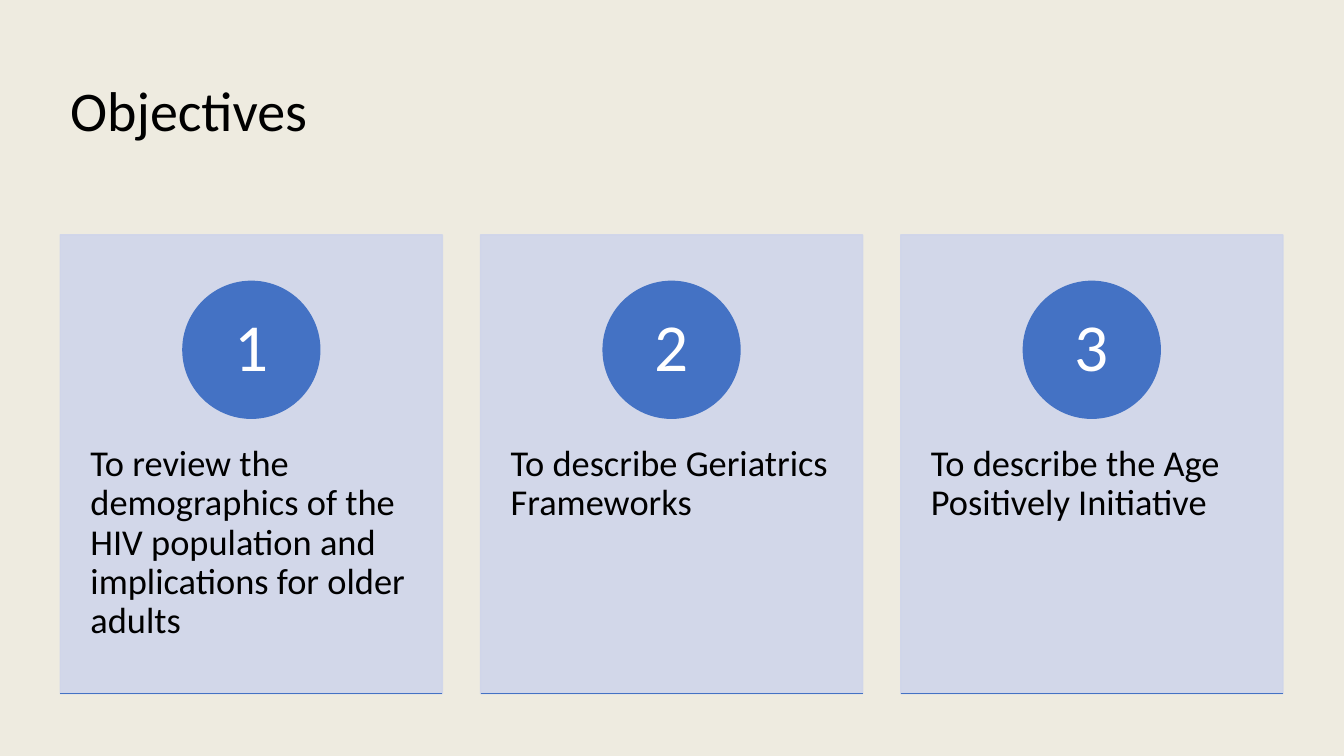
"""Build the Objectives slide with three numbered cards."""
from dataclasses import dataclass

from lxml.etree import SubElement
from pptx import Presentation
from pptx.dml.color import RGBColor
from pptx.dml.fill import FillFormat
from pptx.enum.shapes import MSO_CONNECTOR, MSO_SHAPE
from pptx.enum.text import MSO_ANCHOR, PP_ALIGN
from pptx.oxml.ns import qn
from pptx.shapes.autoshape import Shape
from pptx.slide import Slide
from pptx.util import Cm, Pt

COLOURS = {
    "base": "F2F2F2",
    "tint": "BF9000",
    "card": "CFD5EA",
    "accent": "4472C4",
    "dark": "000000",
    "light": "FFFFFF",
}
SLIDE_WIDTH, SLIDE_HEIGHT = 33.87, 19.05
MARGIN = 1.52
CARD_TOP, CARD_WIDTH, CARD_HEIGHT, CARD_PITCH = 5.92, 9.63, 11.56, 10.59
TEXT_TOP, TEXT_HEIGHT = 10.31, 6.93
CIRCLE_TOP, CIRCLE_SIZE, NUMBER_SIZE = 7.09, 3.45, 2.44


@dataclass(frozen=True)
class Box:
    """A rectangle in centimetres."""

    left: float
    top: float
    width: float
    height: float

    def lengths(self) -> tuple[Cm, Cm, Cm, Cm]:
        """Return the box as slide lengths."""
        return Cm(self.left), Cm(self.top), Cm(self.width), Cm(self.height)


@dataclass(frozen=True)
class Objective:
    """One numbered objective."""

    number: int
    text: str


OBJECTIVES = [
    Objective(1, "To review the demographics of the HIV population and implications for older adults"),
    Objective(2, "To describe Geriatrics Frameworks"),
    Objective(3, "To describe the Age Positively Initiative"),
]


def paint(fill: FillFormat, colour: str, opacity: int) -> None:
    """Apply a solid colour with an opacity in percent."""
    fill.solid()
    fill.fore_color.rgb = RGBColor.from_string(COLOURS[colour])
    if opacity < 100:
        for element in fill._xPr.iter(qn("a:srgbClr")):
            SubElement(element, qn("a:alpha"), val=str(opacity * 1000))


def add_block(slide: Slide, kind: MSO_SHAPE, box: Box, colour: str,
              opacity: int = 100, outlined: bool = True) -> None:
    """Add a plain filled shape."""
    shape = slide.shapes.add_shape(kind, *box.lengths())
    shape.shadow.inherit = False
    paint(shape.fill, colour, opacity)
    if outlined:
        shape.line.width = Pt(1)
        paint(shape.line.fill, colour, opacity)
    else:
        shape.line.fill.background()


def write(shape: Shape, text: str, *, size: int, colour: str = "dark",
          align: PP_ALIGN = PP_ALIGN.LEFT, anchor: MSO_ANCHOR = MSO_ANCHOR.TOP,
          insets: tuple[float, float] = (0.25, 0.13)) -> None:
    """Write one formatted paragraph into a shape."""
    frame = shape.text_frame
    frame.word_wrap = True
    frame.vertical_anchor = anchor
    frame.margin_left = frame.margin_right = Cm(insets[0])
    frame.margin_top = frame.margin_bottom = Cm(insets[1])
    paragraph = frame.paragraphs[0]
    paragraph.alignment = align
    paragraph.line_spacing = 0.9
    run = paragraph.add_run()
    run.text = text
    run.font.name = "Calibri"
    run.font.size = Pt(size)
    run.font.color.rgb = RGBColor.from_string(COLOURS[colour])


def add_baseline(slide: Slide, left: float) -> None:
    """Add the accent line under a card."""
    bottom = Cm(CARD_TOP + CARD_HEIGHT)
    line = slide.shapes.add_connector(
        MSO_CONNECTOR.STRAIGHT, Cm(left), bottom, Cm(left + CARD_WIDTH), bottom)
    line.line.width = Pt(1)
    paint(line.line.fill, "accent", 100)
    SubElement(line._element.spPr, qn("a:effectLst"))


def add_card(slide: Slide, objective: Objective, left: float) -> None:
    """Add one card with its text, number and baseline."""
    add_block(slide, MSO_SHAPE.RECTANGLE,
              Box(left, CARD_TOP, CARD_WIDTH, CARD_HEIGHT), "card", opacity=90)
    text_box = Box(left, TEXT_TOP, CARD_WIDTH, TEXT_HEIGHT)
    write(slide.shapes.add_textbox(*text_box.lengths()), objective.text,
          size=26, insets=(0.76, 0.91))

    circle_left = left + (CARD_WIDTH - CIRCLE_SIZE) / 2
    add_block(slide, MSO_SHAPE.OVAL,
              Box(circle_left, CIRCLE_TOP, CIRCLE_SIZE, CIRCLE_SIZE), "accent")
    gap = (CIRCLE_SIZE - NUMBER_SIZE) / 2
    number_box = Box(circle_left + gap, CIRCLE_TOP + gap, NUMBER_SIZE, NUMBER_SIZE)
    write(slide.shapes.add_textbox(*number_box.lengths()), str(objective.number),
          size=48, colour="light", align=PP_ALIGN.CENTER,
          anchor=MSO_ANCHOR.MIDDLE, insets=(0.28, 0.03))
    add_baseline(slide, left)


def main() -> None:
    """Build and save the presentation."""
    presentation = Presentation()
    presentation.slide_width = Cm(SLIDE_WIDTH)
    presentation.slide_height = Cm(SLIDE_HEIGHT)
    slide = presentation.slides.add_slide(presentation.slide_layouts[5])

    full_slide = Box(0, 0, SLIDE_WIDTH, SLIDE_HEIGHT)
    for colour, opacity in (("base", 100), ("tint", 7)):
        add_block(slide, MSO_SHAPE.RECTANGLE, full_slide, colour, opacity, outlined=False)

    title = slide.shapes.title
    title.left, title.top, title.width, title.height = Box(MARGIN, 1.02, 30.81, 3.68).lengths()
    write(title, "Objectives", size=40, anchor=MSO_ANCHOR.MIDDLE)
    slide.shapes._spTree.append(title._element)

    for index, objective in enumerate(OBJECTIVES):
        add_card(slide, objective, MARGIN + index * CARD_PITCH)
    presentation.save("out.pptx")


if __name__ == "__main__":
    main()
